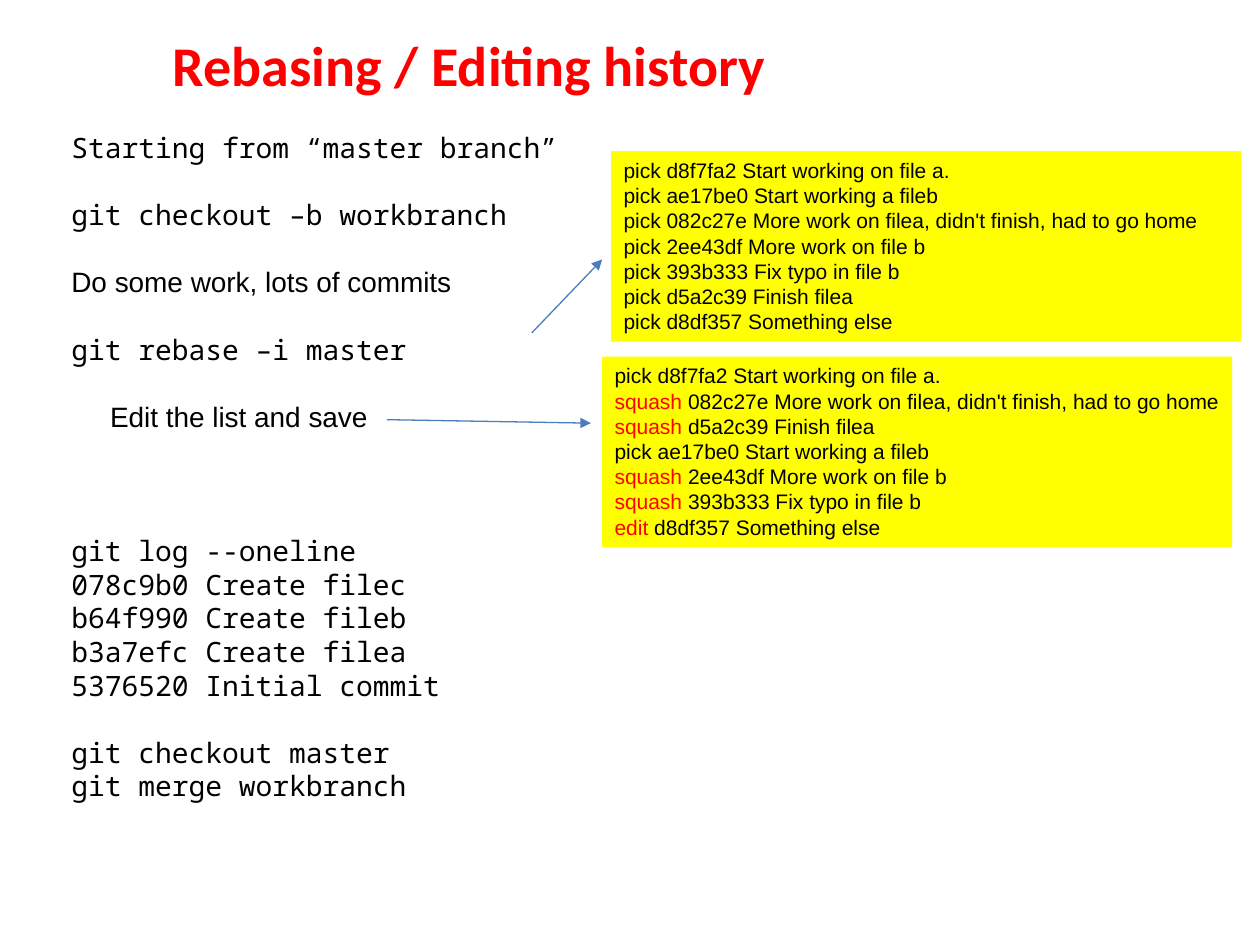
from dataclasses import dataclass

from lxml.etree import SubElement
from pptx import Presentation
from pptx.dml.color import RGBColor
from pptx.enum.shapes import MSO_CONNECTOR, MSO_SHAPE
from pptx.enum.text import MSO_ANCHOR, MSO_AUTO_SIZE, PP_ALIGN
from pptx.oxml.ns import qn
from pptx.util import Cm, Pt


@dataclass(frozen=True)
class Theme:
    """Hold the colours, fonts and type sizes of the slide."""
    ink: RGBColor = RGBColor(0, 0, 0)
    accent: RGBColor = RGBColor(255, 0, 0)
    panel: RGBColor = RGBColor(255, 255, 0)
    arrow: RGBColor = RGBColor(0x4B, 0x7E, 0xBC)
    head: str = "Calibri"
    sans: str = "Arial"
    mono: str = "Noto Sans Mono"
    title: int = 32
    body: int = 16
    todo: int = 12
    leading: float = 1.2


T = Theme()
TITLE = "Rebasing / Editing history"
STEPS = [
    ("Starting from “master branch”", T.mono, 0, 0),
    ("git checkout –b workbranch", T.mono, 1, 0),
    ("Do some work, lots of commits", T.sans, 1, 0),
    ("git rebase –i master", T.mono, 1, 0),
    ("Edit the list and save", T.sans, 1, 0.78),
    ("git log --oneline", T.mono, 3, 0),
    ("078c9b0 Create filec", T.mono, 0, 0),
    ("b64f990 Create fileb", T.mono, 0, 0),
    ("b3a7efc Create filea", T.mono, 0, 0),
    ("5376520 Initial commit", T.mono, 0, 0),
    ("git checkout master", T.mono, 1, 0),
    ("git merge workbranch", T.mono, 0, 0),
]
COMMITS = {
    "d8f7fa2": "Start working on file a.",
    "ae17be0": "Start working a fileb",
    "082c27e": "More work on filea, didn't finish, had to go home",
    "2ee43df": "More work on file b",
    "393b333": "Fix typo in file b",
    "d5a2c39": "Finish filea",
    "d8df357": "Something else",
}
PICKED = [("pick", commit) for commit in COMMITS]
EDITED = [
    ("pick", "d8f7fa2"), ("squash", "082c27e"), ("squash", "d5a2c39"),
    ("pick", "ae17be0"), ("squash", "2ee43df"), ("squash", "393b333"),
    ("edit", "d8df357"),
]


def apply(obj, **values):
    """Set each named attribute of an object."""
    for name, value in values.items():
        setattr(obj, name, value)


def place(sp, box):
    """Move and size a shape to a box in centimetres."""
    apply(sp, **dict(zip(("left", "top", "width", "height"), map(Cm, box))))


def add_run(p, text, font, size, color, bold=False):
    """Append a formatted run to a paragraph."""
    r = p.add_run()
    r.text = text
    apply(r.font, name=font, size=Pt(size), bold=bold)
    r.font.color.rgb = color


def paragraphs(tf, items):
    """Yield one paragraph of the frame with each item."""
    for i, item in enumerate(items):
        yield tf.add_paragraph() if i else tf.paragraphs[0], item


def add_title(s, box):
    """Place and format the slide title."""
    sp = s.shapes.title
    place(sp, box)
    tf = sp.text_frame
    apply(tf, auto_size=MSO_AUTO_SIZE.NONE, vertical_anchor=MSO_ANCHOR.TOP)
    p = tf.paragraphs[0]
    p.alignment = PP_ALIGN.LEFT
    add_run(p, TITLE, T.head, T.title, T.accent, True)


def add_steps(s, box):
    """Add the column of commands, spaced by whole lines."""
    tf = s.shapes.add_textbox(*map(Cm, box)).text_frame
    tf.word_wrap = True
    line = T.body * T.leading
    for p, (text, font, gap, indent) in paragraphs(tf, STEPS):
        apply(p, line_spacing=Pt(line), space_before=Pt(gap * line))
        p._p.get_or_add_pPr().set("marL", str(Cm(indent)))
        add_run(p, text, font, T.body, T.ink)


def add_todo(s, box, entries):
    """Add a rebase list with its changed actions highlighted."""
    sp = s.shapes.add_shape(MSO_SHAPE.RECTANGLE, *map(Cm, box))
    sp.shadow.inherit = False
    sp.fill.solid()
    sp.fill.fore_color.rgb = T.panel
    sp.line.fill.background()
    tf = sp.text_frame
    apply(tf, word_wrap=True, vertical_anchor=MSO_ANCHOR.TOP, margin_right=0)
    for p, (action, commit) in paragraphs(tf, entries):
        apply(p, alignment=PP_ALIGN.LEFT, line_spacing=Pt(T.todo * T.leading))
        color = T.ink if action == "pick" else T.accent
        add_run(p, action, T.sans, T.todo, color)
        add_run(p, f" {commit} {COMMITS[commit]}", T.sans, T.todo, T.ink)


def add_arrow(s, start, end):
    """Add a thin arrow between two points."""
    sp = s.shapes.add_connector(MSO_CONNECTOR.STRAIGHT, *map(Cm, start + end))
    sp.line.width = Pt(0.75)
    sp.line.color.rgb = T.arrow
    SubElement(sp.line._get_or_add_ln(), qn("a:tailEnd"), type="triangle")
    SubElement(sp._element.spPr, qn("a:effectLst"))


def main():
    """Build and save the slide."""
    prs = Presentation()
    apply(prs, slide_width=Cm(25.4), slide_height=Cm(19.05))
    s = prs.slides.add_slide(prs.slide_layouts[5])
    add_title(s, (3.23, 0.48, 21.16, 1.57))
    add_steps(s, (1.19, 2.51, 23.19, 14.94))
    add_todo(s, (12.32, 3.05, 12.7, 3.84), PICKED)
    add_arrow(s, (10.72, 6.71), (12.14, 5.23))
    add_todo(s, (12.14, 7.19, 12.7, 3.84), EDITED)
    add_arrow(s, (7.8, 8.46), (11.91, 8.53))
    prs.save("out.pptx")


if __name__ == "__main__":
    main()
